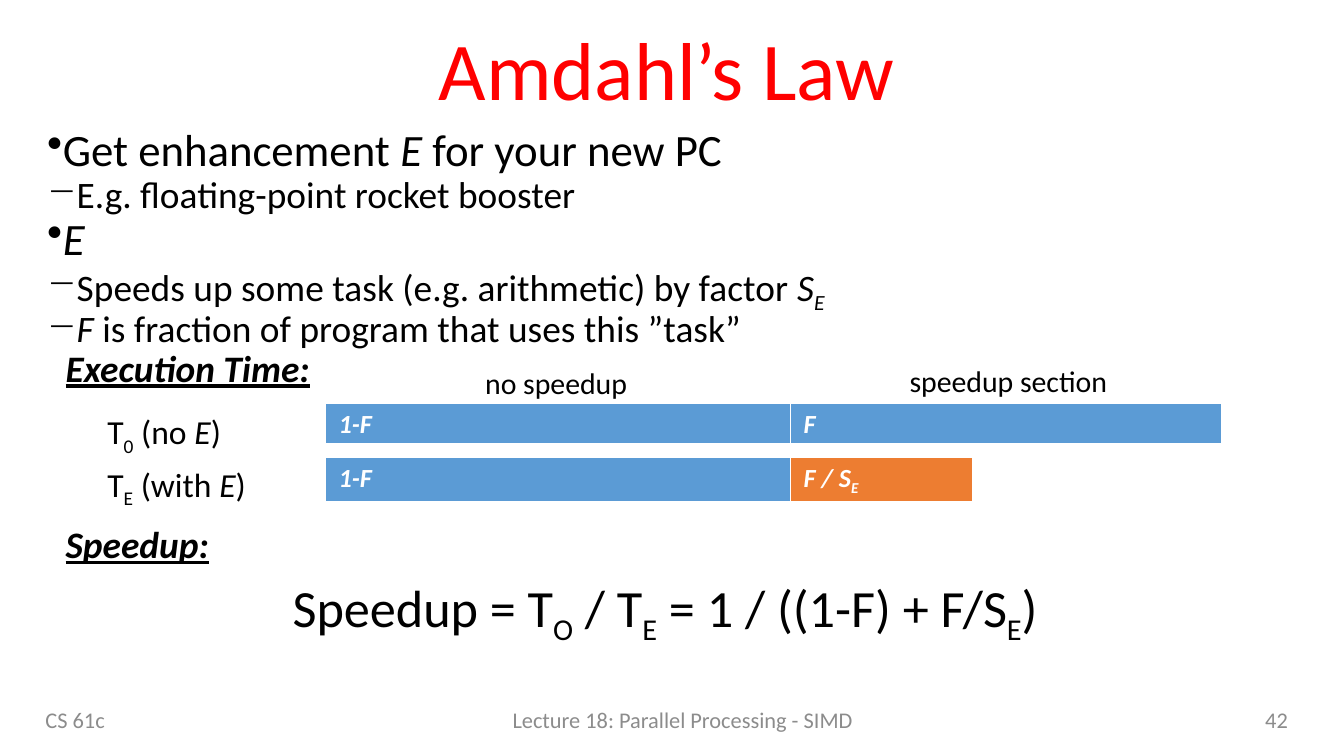
from lxml import etree
from pptx import Presentation
from pptx.dml.color import RGBColor
from pptx.enum.text import MSO_ANCHOR, PP_ALIGN
from pptx.oxml.ns import qn
from pptx.util import Cm, Pt

LEFT, MID, RIGHT = PP_ALIGN.LEFT, PP_ALIGN.CENTER, PP_ALIGN.RIGHT
TOP, CENTER = MSO_ANCHOR.TOP, MSO_ANCHOR.MIDDLE
BLACK, WHITE, RED, GREY = "000000", "FFFFFF", "FF0000", "8C8C8C"
BLUE, ORANGE = "5B9BD5", "ED7D31"
BAR_LEFT, BASE_WIDTH, BAR_HEIGHT = 6.15, 8.79, 0.76
EDGES = (("lnL", 1), ("lnR", 1), ("lnT", 1), ("lnB", 3))

# A line of text is a list of (words, marks): "i" is italic, "s" is subscript.
BODY = [
    (0, [("Get enhancement ", ""), ("E", "i"), (" for your new PC", "")]),
    (1, [("E.g. floating-point rocket booster", "")]),
    (0, [("E", "i")]),
    (1, [("Speeds up some task (e.g. arithmetic) by factor ", ""),
         ("S", "i"), ("E", "is")]),
    (1, [("F", "i"), (" is fraction of program that uses this ”task”", "")]),
]
FORMULA = [("Speedup = T", ""), ("O", "s"), (" / T", ""), ("E", "s"),
           (" = 1 / ((1-F) + F/S", ""), ("E", "s"), (")", "")]


def color(code):
    return RGBColor.from_string(code)


def write(para, line, size, code=BLACK, align=LEFT, strong=False):
    """Fill a paragraph; strong means bold and italic."""
    para.alignment = align
    font = para.font
    font.name, font.size = "Calibri", Pt(size)
    font.color.rgb = color(code)
    if strong:
        font.bold = font.italic = True
    for words, marks in line:
        run = para.add_run()
        run.text = words
        if "i" in marks:
            run.font.italic = True
        if "s" in marks:
            run._r.get_or_add_rPr().set("baseline", "-25000")


def add_box(slide, left, top, width, height, anchor=TOP, wrap=False):
    box = slide.shapes.add_textbox(Cm(left), Cm(top), Cm(width), Cm(height))
    frame = box.text_frame
    frame.word_wrap = wrap
    frame.vertical_anchor = anchor
    return frame


def add_label(slide, left, top, width, height, line, size):
    frame = add_box(slide, left, top, width, height)
    write(frame.paragraphs[0], line, size)


def add_head(slide, top, width, words):
    """Add an underlined section heading."""
    para = add_box(slide, 0.99, top, width, 1.12).paragraphs[0]
    write(para, [(words, "")], 20, strong=True)
    para.font.underline = True


def add_body(slide):
    frame = add_box(slide, 0.64, 2.29, 23.98, 9.93, wrap=True)
    for i, (level, line) in enumerate(BODY):
        para = frame.add_paragraph() if i else frame.paragraphs[0]
        write(para, line, 20 if level else 24)
        para.level = level
        para.line_spacing = 0.9
        props = para._p.get_or_add_pPr()
        props.set("marL", "0")
        props.set("indent", str(-Cm(0.64)))
        mark = etree.Element(qn("a:buChar"), char="−" if level else "•")
        props.find(qn("a:defRPr")).addprevious(mark)


def set_edges(cell):
    props = cell._tc.get_or_add_tcPr()
    for i, (tag, width) in enumerate(EDGES):
        edge = etree.Element(qn("a:" + tag), w=str(Pt(width)))
        fill = etree.SubElement(edge, qn("a:solidFill"))
        etree.SubElement(fill, qn("a:srgbClr"), val=WHITE)
        props.insert(i, edge)


def add_bar(slide, top, width, line, code):
    """Add a time bar: the fixed part, then the part that E affects."""
    parts = [(BASE_WIDTH, [("1-F", "")], BLUE), (width, line, code)]
    table = slide.shapes.add_table(
        1, len(parts), Cm(BAR_LEFT), Cm(top),
        Cm(BASE_WIDTH + width), Cm(BAR_HEIGHT)).table
    for i, (size, words, shade) in enumerate(parts):
        table.columns[i].width = Cm(size)
        cell = table.cell(0, i)
        cell.margin_left = cell.margin_right = Cm(0.25)
        cell.margin_top = cell.margin_bottom = Cm(0.1)
        cell.fill.solid()
        cell.fill.fore_color.rgb = color(shade)
        set_edges(cell)
        write(cell.text_frame.paragraphs[0], words, 14, WHITE, strong=True)


def main():
    deck = Presentation()
    deck.slide_width, deck.slide_height = Cm(25.4), Cm(14.29)
    slide = deck.slides.add_slide(deck.slide_layouts[6])

    title = add_box(slide, 0.61, 0.3, 23.98, 2.18, CENTER, True).paragraphs[0]
    write(title, [("Amdahl’s Law", "")], 44, RED, MID)
    title.line_spacing = 0.9
    add_body(slide)

    for left, width, words, align in (
            (0.61, 6.25, "CS 61c", LEFT),
            (7.42, 10.97, "Lecture 18: Parallel Processing - SIMD", MID),
            (18.87, 5.72, "42", RIGHT)):
        frame = add_box(slide, left, 13.23, width, 0.76, CENTER, True)
        write(frame.paragraphs[0], [(words, "")], 12, GREY, align)

    add_bar(slide, 7.62, 8.15, [("F", "")], BLUE)
    add_bar(slide, 8.64, 3.45, [("F / S", ""), ("E", "s")], ORANGE)

    add_head(slide, 6.4, 5.36, "Execution Time:")
    add_head(slide, 9.73, 3.4, "Speedup:")
    for top, width, sub, note in ((7.65, 2.72, "0", " (no "),
                                  (8.64, 3.18, "E", " (with ")):
        line = [("T", ""), (sub, "s"), (note, ""), ("E", "i"), (")", "")]
        add_label(slide, 1.78, top, width, 1.02, line, 18)
    add_label(slide, 8.92, 6.76, 3.23, 0.94, [("no speedup", "")], 16)
    add_label(slide, 16.94, 6.73, 4.29, 0.94, [("speedup section", "")], 16)
    add_label(slide, 5.28, 10.74, 14.94, 1.45, FORMULA, 28)

    deck.save("out.pptx")


if __name__ == "__main__":
    main()
